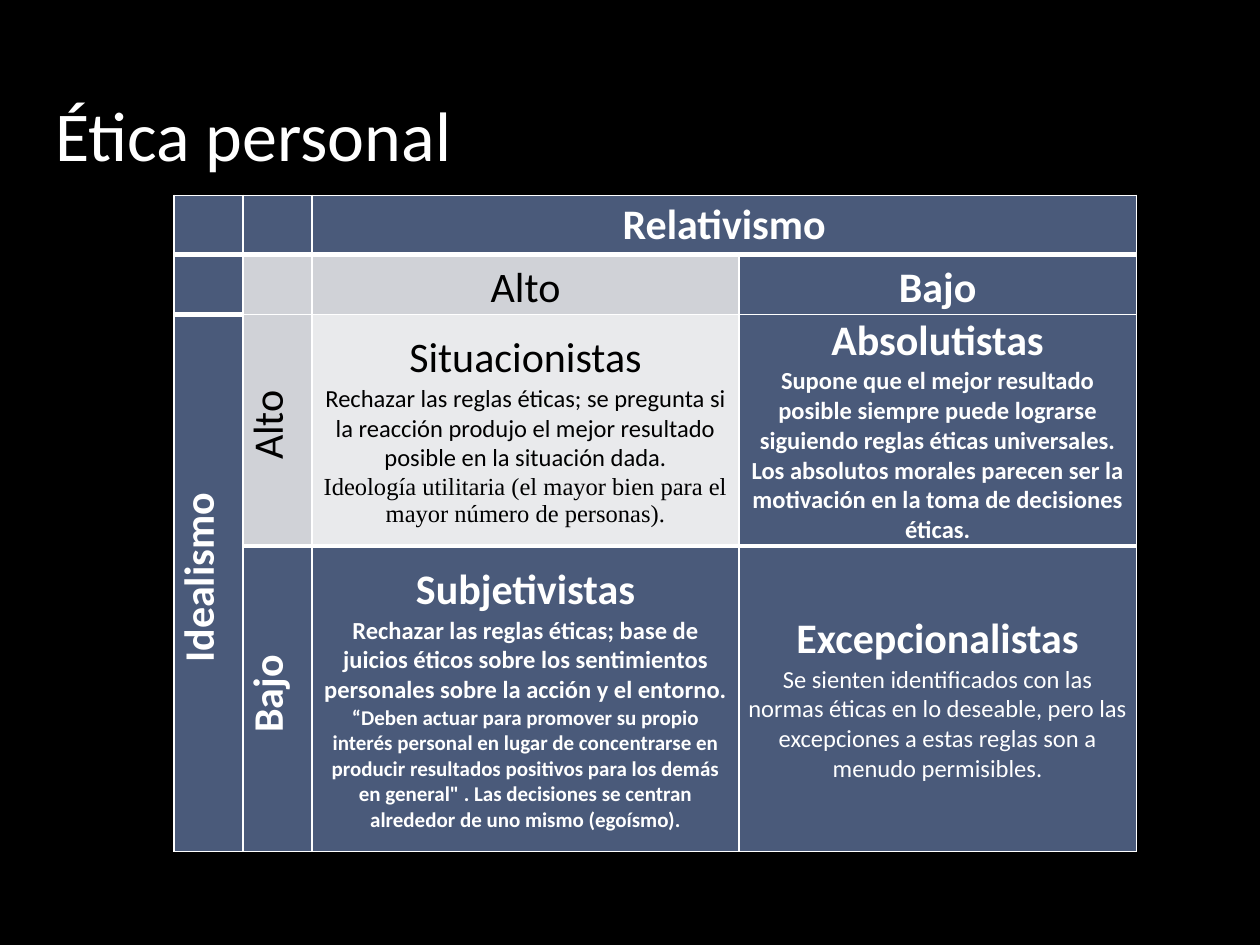
"""Build the slide "Ética personal": a matrix of idealism against relativism."""
from dataclasses import dataclass

from lxml import etree
from pptx import Presentation
from pptx.dml.color import RGBColor
from pptx.enum import text
from pptx.oxml.ns import qn
from pptx.util import Pt


@dataclass(frozen=True)
class Theme:
    font: str = "Calibri"
    serif: str = "Times New Roman"
    black: str = "000000"
    white: str = "FFFFFF"
    navy: str = "4A5A7A"
    grey: str = "D0D2D7"
    pale: str = "E9EAEC"
    title: float = 40
    heading: float = 24
    body: float = 14
    small: float = 12
    thin: float = 1
    thick: float = 3


THEME = Theme()
TITLE = "Ética personal"
TITLE_BOX = (28, 18, 605, 84.24)
TABLE_ORIGIN = (99.36, 111.6)
COLUMNS = (39.5, 39.5, 244, 227)
ROWS = (34, 34, 132.5, 174.5)
MERGES = (((0, 2), (0, 3)), ((2, 0), (3, 0)))
SIDEWAYS_COLUMNS = (0, 1)
THICK_TOPS = {(1, column) for column in range(4)} | {(2, 0), (3, 1), (3, 2), (3, 3)}
FILLS = {(1, 1): THEME.grey, (1, 2): THEME.grey, (2, 1): THEME.grey, (2, 2): THEME.pale}

STYLES = {
    "heading": (THEME.font, THEME.heading, True),
    "plain heading": (THEME.font, THEME.heading, False),
    "body": (THEME.font, THEME.body, False),
    "bold body": (THEME.font, THEME.body, True),
    "serif body": (THEME.serif, THEME.body, False),
    "bold small": (THEME.font, THEME.small, True),
}
LABELS = {
    (0, 2): ("Relativismo", "heading"),
    (1, 2): ("Alto", "plain heading"),
    (1, 3): ("Bajo", "heading"),
    (2, 0): ("Idealismo", "heading"),
    (2, 1): ("Alto", "plain heading"),
    (3, 1): ("Bajo", "heading"),
}
QUADRANTS = {
    (2, 2): [
        [("Situacionistas", "plain heading"),
         ("Rechazar las reglas éticas; se pregunta si la reacción produjo el mejor "
          "resultado posible en la situación dada.", "body")],
        [("Ideología utilitaria (el mayor bien para el mayor número de personas).",
          "serif body")],
    ],
    (2, 3): [
        [("Absolutistas", "heading"),
         ("Supone que el mejor resultado posible siempre puede lograrse siguiendo "
          "reglas éticas universales.", "bold body")],
        [("Los absolutos morales parecen ser la motivación en la toma de decisiones "
          "éticas.", "bold body")],
    ],
    (3, 2): [
        [("Subjetivistas", "heading"),
         ("Rechazar las reglas éticas; base de juicios éticos sobre los sentimientos "
          "personales sobre la acción y el entorno.", "bold body")],
        [("“Deben actuar para promover su propio interés personal en lugar de "
          "concentrarse en producir resultados positivos para los demás en general\" . "
          "Las decisiones se centran alrededor de uno mismo (egoísmo).", "bold small")],
    ],
    (3, 3): [
        [("Excepcionalistas", "heading")],
        [("Se sienten identificados con las normas éticas en lo deseable, pero las "
          "excepciones a estas reglas son a menudo permisibles.", "body")],
    ],
}


def add_run(paragraph, words, font, size, bold, color):
    run = paragraph.add_run()
    run.text = words
    run.font.name = font
    run.font.size = Pt(size)
    run.font.bold = bold
    run.font.color.rgb = RGBColor.from_string(color)


def add_title(slide):
    frame = slide.shapes.add_textbox(*map(Pt, TITLE_BOX)).text_frame
    frame.word_wrap = True
    frame.vertical_anchor = text.MSO_ANCHOR.BOTTOM
    frame.margin_left, frame.margin_bottom = Pt(3.6), Pt(2)
    add_run(frame.paragraphs[0], TITLE, THEME.font, THEME.title, False, THEME.white)


def add_borders(cell, row, column):
    properties = cell._tc.get_or_add_tcPr()
    heavy = {"T": (row, column) in THICK_TOPS, "B": (row + 1, column) in THICK_TOPS}
    for side in "LRTB":
        width = THEME.thick if heavy.get(side) else THEME.thin
        line = etree.SubElement(properties, qn(f"a:ln{side}"), w=str(int(Pt(width))))
        fill = etree.SubElement(line, qn("a:solidFill"))
        etree.SubElement(fill, qn("a:srgbClr"), val=THEME.white)


def write_cell(cell, paragraphs, color, sideways):
    frame = cell.text_frame
    for index, runs in enumerate(paragraphs):
        paragraph = frame.add_paragraph() if index else frame.paragraphs[0]
        paragraph.alignment = text.PP_ALIGN.CENTER
        if sideways:
            paragraph._p.get_or_add_pPr().set("marL", str(int(Pt(5.75))))
        for position, (words, style) in enumerate(runs):
            if position:
                paragraph.add_line_break()
            add_run(paragraph, words, *STYLES[style], color)


def style_cell(cell, row, column):
    place = (row, column)
    add_borders(cell, row, column)
    background = FILLS.get(place, THEME.navy)
    cell.fill.solid()
    cell.fill.fore_color.rgb = RGBColor.from_string(background)
    cell.margin_left = cell.margin_right = Pt(5)
    cell.margin_top = cell.margin_bottom = Pt(0)
    label = place in LABELS and row > 0
    cell.vertical_anchor = text.MSO_ANCHOR.BOTTOM if label else text.MSO_ANCHOR.MIDDLE
    sideways = label and column in SIDEWAYS_COLUMNS
    if sideways:
        cell._tc.get_or_add_tcPr().set("vert", "vert270")
    paragraphs = [[LABELS[place]]] if place in LABELS else QUADRANTS.get(place, [])
    color = THEME.white if background == THEME.navy else THEME.black
    write_cell(cell, paragraphs, color, sideways)


def add_matrix(slide):
    bounds = (*TABLE_ORIGIN, sum(COLUMNS), sum(ROWS))
    table = slide.shapes.add_table(len(ROWS), len(COLUMNS), *map(Pt, bounds)).table
    table.first_row = table.horz_banding = False
    for column, width in zip(table.columns, COLUMNS):
        column.width = Pt(width)
    for row, height in zip(table.rows, ROWS):
        row.height = Pt(height)
    for first, last in MERGES:
        table.cell(*first).merge(table.cell(*last))
    for row in range(len(ROWS)):
        for column in range(len(COLUMNS)):
            style_cell(table.cell(row, column), row, column)


def main():
    presentation = Presentation()
    presentation.slide_width, presentation.slide_height = Pt(720), Pt(540)
    slide = presentation.slides.add_slide(presentation.slide_layouts[6])
    slide.background.fill.solid()
    slide.background.fill.fore_color.rgb = RGBColor.from_string(THEME.black)
    add_title(slide)
    add_matrix(slide)
    presentation.save("out.pptx")


if __name__ == "__main__":
    main()
